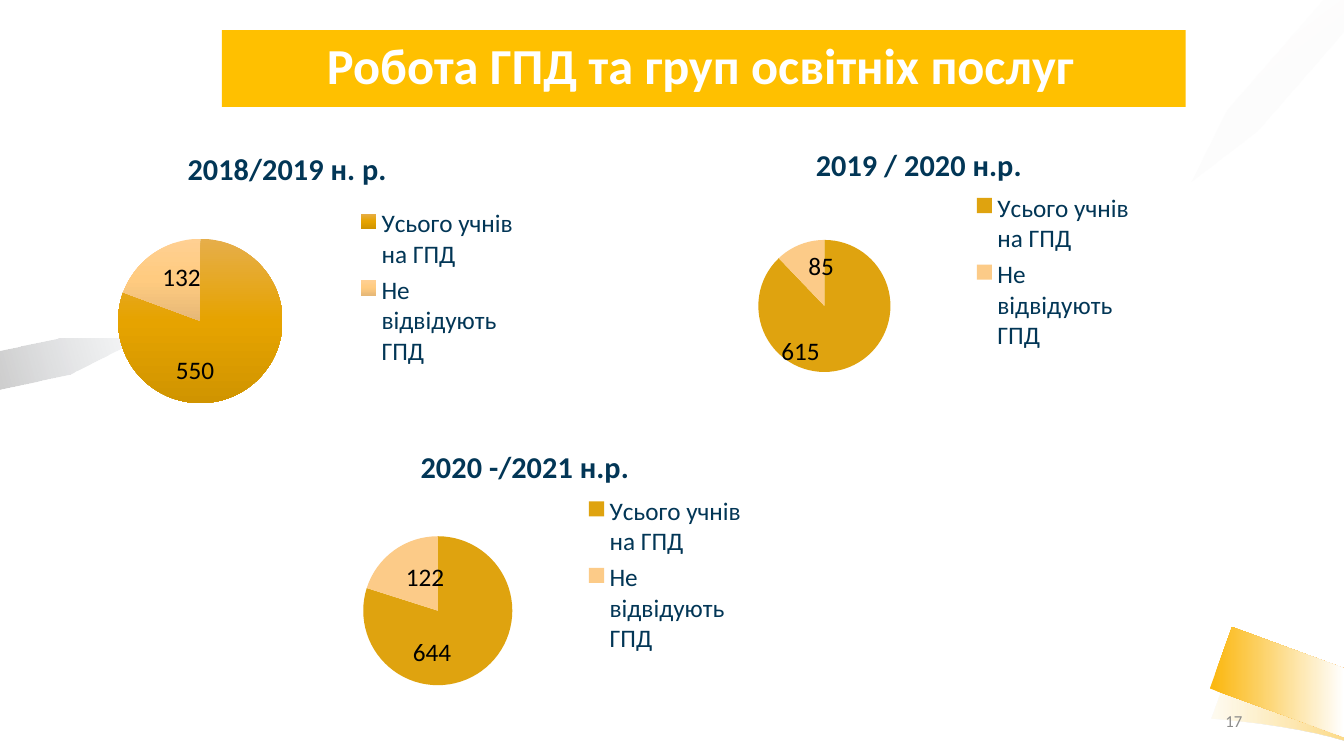
from lxml import etree
from pptx import Presentation
from pptx.chart.data import CategoryChartData
from pptx.dml.color import RGBColor
from pptx.enum.chart import XL_CHART_TYPE, XL_LABEL_POSITION, XL_LEGEND_POSITION
from pptx.enum.shapes import MSO_SHAPE
from pptx.enum.text import MSO_ANCHOR, PP_ALIGN
from pptx.oxml.ns import qn
from pptx.util import Inches, Pt

PIE = XL_CHART_TYPE.PIE
INSIDE = XL_LABEL_POSITION.CENTER
RIGHT_SIDE = XL_LEGEND_POSITION.RIGHT
RECT = MSO_SHAPE.RECTANGLE
MIDDLE = MSO_ANCHOR.MIDDLE
CENTER, RIGHT = PP_ALIGN.CENTER, PP_ALIGN.RIGHT

FONT = "Calibri"
WHITE = RGBColor(0xFF, 0xFF, 0xFF)
BLACK = RGBColor(0, 0, 0)
GRAY = RGBColor(0x8C, 0x8C, 0x8C)
LIGHT = RGBColor(0xF2, 0xF2, 0xF2)
SILVER = RGBColor(0xE7, 0xE6, 0xE6)
SLATE = RGBColor(0x44, 0x54, 0x6A)
NAVY = RGBColor(0x02, 0x36, 0x56)
AMBER = RGBColor(0xFF, 0xC0, 0x00)
HONEY = RGBColor(0xFB, 0xB8, 0x12)
GOLD = RGBColor(0xDF, 0xA3, 0x0F)
PEACH = RGBColor(0xFC, 0xCB, 0x88)

# Gradient stops: position, colour, opacity in percent
GOLD_FADE = [(0, RGBColor(0xE6, 0xAE, 0x4A), 100),
             (50, RGBColor(0xE6, 0xA3, 0x00), 100),
             (100, RGBColor(0xD0, 0x94, 0x00), 100)]
PEACH_FADE = [(0, RGBColor(0xFF, 0xD0, 0x92), 100),
              (50, RGBColor(0xFF, 0xCB, 0x80), 100),
              (100, RGBColor(0xE6, 0xB8, 0x77), 100)]

GROUPS = ["Усього учнів на ГПД", "Не відвідують ГПД"]
KEY_WIDE, KEY_HIGH = 1.62, 1.68


def put(frame, text, size=18, color=BLACK, bold=False, align=None):
    """Write one formatted line into a text frame."""
    para = frame.paragraphs[0]
    if align is not None:
        para.alignment = align
    run = para.add_run()
    run.text = text
    font = run.font
    font.name, font.size, font.bold = FONT, Pt(size), bold
    font.color.rgb = color
    return para


def blend(fmt, props, stops, angle):
    """Fill a shape or a slice with a gradient."""
    fmt.fill.gradient()
    grad = props.find(qn("a:gradFill"))
    for child in list(grad):
        grad.remove(child)
    row = etree.SubElement(grad, qn("a:gsLst"))
    for pos, color, alpha in stops:
        stop = etree.SubElement(row, qn("a:gs"), pos=str(pos * 1000))
        tint = etree.SubElement(stop, qn("a:srgbClr"), val=str(color))
        etree.SubElement(tint, qn("a:alpha"), val=str(alpha * 1000))
    etree.SubElement(grad, qn("a:lin"), ang=str(angle * 60000), scaled="0")


def place(node, index, inner=False, edge=True, **spots):
    """Give a chart part a manual layout in fractions of the chart."""
    for old in node.findall(qn("c:layout")):
        node.remove(old)
    layout = etree.Element(qn("c:layout"))
    manual = etree.SubElement(layout, qn("c:manualLayout"))
    if inner:
        etree.SubElement(manual, qn("c:layoutTarget"), val="inner")
    if edge:
        for mode in ("xMode", "yMode"):
            etree.SubElement(manual, qn("c:" + mode), val="edge")
    for name, value in spots.items():
        etree.SubElement(manual, qn("c:" + name), val=str(round(value, 3)))
    node.insert(index, layout)


def curve(a, b, c, d, steps=12):
    """Points along a cubic curve."""
    points = []
    for i in range(steps + 1):
        t = i / steps
        u = 1 - t
        points.append(tuple(
            u**3 * p + 3 * u * u * t * q + 3 * u * t * t * r + t**3 * s
            for p, q, r, s in zip(a, b, c, d)))
    return points


def ribbon(slide, points, stops, angle):
    spots = [(Inches(x), Inches(y)) for x, y in points]
    path = slide.shapes.build_freeform(*spots[0])
    path.add_line_segments(spots[1:], close=True)
    shape = path.convert_to_shape()
    shape.shadow.inherit = False
    shape.line.fill.background()
    blend(shape, shape._element.spPr, stops, angle)


def decor(slide):
    low = curve((12.02, 7.13), (12.02, 7.13), (12.78, 7.18), (13.33, 7.35))
    top = curve((13.33, 6.68), (12.72, 6.51), (12.24, 6.52), (12.24, 6.52))
    ribbon(slide, low + top, [(3, HONEY, 6), (100, HONEY, 50)], 0)
    ribbon(slide, [(13.33, 6.63), (12.22, 6.22), (12, 6.83), (13.33, 7.31)],
           [(3, HONEY, 100), (100, WHITE, 100)], 0)
    ribbon(slide, [(1.4, 3.36), (0.58, 3.36), (0, 3.48), (0, 3.86),
                   (0.7, 3.71)], [(0, SLATE, 5), (100, BLACK, 20)], 164)
    ribbon(slide, [(13.12, 0), (12.17, 1.09), (11.82, 1.8), (12.47, 1.3),
                   (13.33, 0.31), (13.33, 0)],
           [(0, LIGHT, 5), (100, SILVER, 20)], 53)


def banner(slide, box, text):
    shape = slide.shapes.add_shape(RECT, *map(Inches, box))
    shape.shadow.inherit = False
    shape.fill.solid()
    shape.fill.fore_color.rgb = AMBER
    shape.line.fill.background()
    frame = shape.text_frame
    frame.word_wrap = True
    frame.vertical_anchor = MIDDLE
    frame.margin_left, frame.margin_right = Inches(0.16), Inches(0.22)
    para = put(frame, text, size=36, color=WHITE, bold=True, align=CENTER)
    para.line_spacing = 0.9


def number(slide, box, text):
    frame = slide.shapes.add_textbox(*map(Inches, box)).text_frame
    frame.word_wrap = True
    frame.vertical_anchor = MIDDLE
    put(frame, text, size=12, color=GRAY, align=RIGHT)


def pie(slide, box, title, name, values, labels, disc, head, key, shifts,
        fades=None):
    """Pie with title and legend; disc is left, top and diameter in inches."""
    data = CategoryChartData()
    data.categories = GROUPS
    data.add_series(name, values)
    chart = slide.shapes.add_chart(PIE, *map(Inches, box), data).chart
    chart.font.name, chart.font.size = FONT, Pt(18)
    chart.font.color.rgb = BLACK
    wide, high = box[2:]

    # Title
    chart.has_title = True
    put(chart.chart_title.text_frame, title, size=21.6, color=NAVY, bold=True)
    place(chart.chart_title._element, 1, x=head[0], y=head[1])

    # Legend
    chart.has_legend = True
    legend = chart.legend
    legend.position = RIGHT_SIDE
    legend.include_in_layout = False
    legend.font.name, legend.font.size = FONT, Pt(18)
    legend.font.color.rgb = NAVY
    place(legend._element, 1, x=key[0], y=key[1], w=KEY_WIDE / wide,
          h=KEY_HIGH / high)

    # Slices and their labels
    left, top, size = disc
    place(chart._chartSpace.chart.plotArea, 0, inner=True, x=left / wide,
          y=top / high, w=size / wide, h=size / high)
    plot = chart.plots[0]
    plot.vary_by_categories = True
    series = plot.series[0]
    series.data_labels.show_value = True
    for i, color in enumerate((GOLD, PEACH)):
        point = series.points[i]
        look = point.format
        look.fill.solid()
        look.fill.fore_color.rgb = color
        look.line.fill.background()
        if fades:
            props = series._element.findall(qn("c:dPt"))[i].find(qn("c:spPr"))
            blend(look, props, fades[i], 90)
        label = point.data_label
        put(label.text_frame, labels[i])
        label.position = INSIDE
        tag = series._element.find(qn("c:dLbls")).findall(qn("c:dLbl"))[i]
        place(tag, 1, edge=False, x=shifts[i][0], y=shifts[i][1])


def main():
    deck = Presentation()
    deck.slide_width, deck.slide_height = Inches(13.33), Inches(7.5)
    slide = deck.slides.add_slide(deck.slide_layouts[6])
    decor(slide)
    banner(slide, (2.2, 0.3, 9.56, 0.76), "Робота ГПД та груп освітніх послуг")
    number(slide, (9.42, 6.95, 3, 0.4), "17")
    pie(slide, (6.87, 1.25, 4.49, 2.9), "2019 / 2020 н.р.", "Series 1",
        (615, 85), ("615", "85"), disc=(0.65, 1.13, 1.31), head=(0.26, 0.04),
        key=(0.615, 0.21), shifts=((-0.08, 0.05), (0.02, -0.03)))
    pie(slide, (2.93, 4.25, 4.57, 2.94), "2020 -/2021 н.р.",
        "2020 -/2021 н.р.", (517, 130), ("644", "122"),
        disc=(0.67, 1.07, 1.48), head=(0.26, 0.04), key=(0.625, 0.21),
        shifts=((-0.06, 0.04), (0.02, -0.01)))
    pie(slide, (0.47, 1.3, 4.77, 3.1), "2018/2019 н. р.", "2018/2019 н. р.",
        (550, 132), ("550", "132"), disc=(0.7, 1.07, 1.63),
        head=(0.28, 0.035), key=(0.64, 0.23),
        shifts=((-0.06, 0.05), (0.01, -0.03)), fades=(GOLD_FADE, PEACH_FADE))
    deck.save("out.pptx")


if __name__ == "__main__":
    main()
